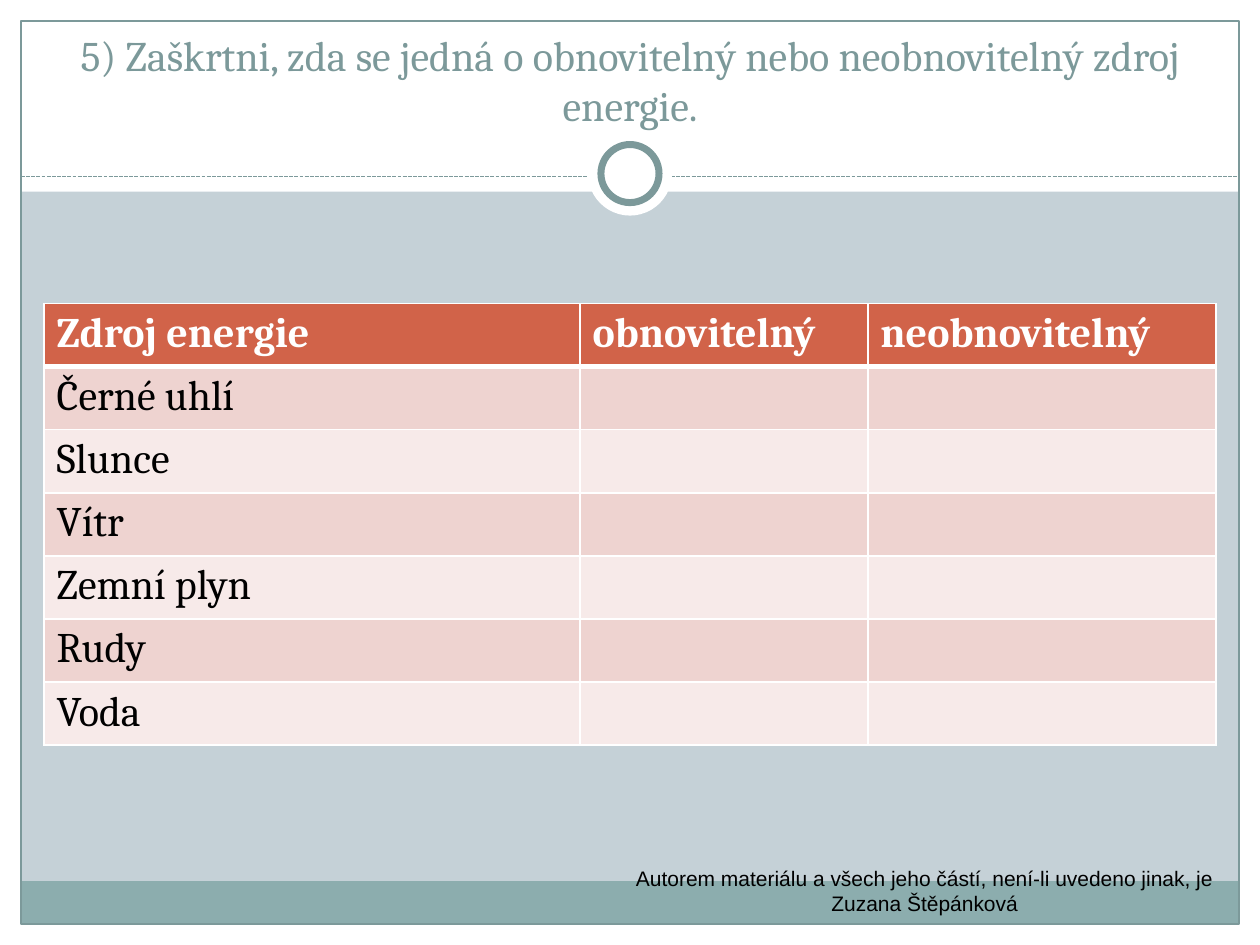
from lxml.etree import SubElement
from pptx import Presentation
from pptx.dml.color import RGBColor
from pptx.enum.dml import MSO_LINE
from pptx.enum.shapes import MSO_CONNECTOR, MSO_SHAPE
from pptx.enum.text import MSO_ANCHOR, PP_ALIGN
from pptx.oxml.ns import qn
from pptx.util import Pt

TITLE = "5) Zaškrtni, zda se jedná o obnovitelný nebo neobnovitelný zdroj energie."
CREDIT = "Autorem materiálu a všech jeho částí, není-li uvedeno jinak, je Zuzana Štěpánková"
HEADERS = ["Zdroj energie", "obnovitelný", "neobnovitelný"]
SOURCES = ["Černé uhlí", "Slunce", "Vítr", "Zemní plyn", "Rudy", "Voda"]

WHITE = RGBColor(0xFF, 0xFF, 0xFF)
BLACK = RGBColor(0, 0, 0)
BACKGROUND = RGBColor(0xC5, 0xD1, 0xD7)
TEAL = RGBColor(0x7C, 0x99, 0x9A)
FOOTER = RGBColor(0x8C, 0xAD, 0xAE)
ORANGE = RGBColor(0xD1, 0x63, 0x49)
BANDS = [RGBColor(0xEE, 0xD3, 0xD0), RGBColor(0xF7, 0xEA, 0xE9)]

WIDTH, HEIGHT, MARGIN = 720, 540, 12
INNER_WIDTH, INNER_HEIGHT = WIDTH - 2 * MARGIN, HEIGHT - 2 * MARGIN
HEADER_HEIGHT, FOOTER_HEIGHT = 109.5, 24.5
DIVIDER_Y, RING_Y = 100.8, 99.2
COLUMN_WIDTHS = [306.3, 164.4, 199]
ROW_HEIGHT = 34.85
TABLE_LEFT, TABLE_TOP = 25.2, 173.5

FRAME_PARTS = [
    (0, HEIGHT - MARGIN, WIDTH, MARGIN, WHITE),
    (0, 0, WIDTH, HEADER_HEIGHT, WHITE),
    (0, 0, MARGIN, HEIGHT, WHITE),
    (WIDTH - MARGIN, 0, MARGIN, HEIGHT, WHITE),
    (MARGIN, HEIGHT - MARGIN - FOOTER_HEIGHT, INNER_WIDTH, FOOTER_HEIGHT, FOOTER),
]
RING_PARTS = [(48, None, 0), (33.2, TEAL, 4)]


def write(frame, text, font="Cambria", size=24, color=BLACK, bold=False, align=PP_ALIGN.LEFT):
    para = frame.paragraphs[0]
    para.alignment = align
    span = para.add_run()
    span.text = text
    span.font.name = font
    span.font.size = Pt(size)
    span.font.bold = bold
    span.font.color.rgb = color


def add_box(page, left, top, width, height, text, anchor=MSO_ANCHOR.TOP, **style):
    box = page.shapes.add_textbox(Pt(left), Pt(top), Pt(width), Pt(height))
    box.text_frame.word_wrap = True
    box.text_frame.vertical_anchor = anchor
    write(box.text_frame, text, align=PP_ALIGN.CENTER, **style)


def add_part(page, kind, left, top, width, height, fill=None, line=None, weight=0):
    part = page.shapes.add_shape(kind, Pt(left), Pt(top), Pt(width), Pt(height))
    part.shadow.inherit = False
    if fill is None:
        part.fill.background()
    else:
        part.fill.solid()
        part.fill.fore_color.rgb = fill
    if line is None:
        part.line.fill.background()
    else:
        part.line.color.rgb = line
        part.line.width = Pt(weight)


def add_divider(page):
    divider = page.shapes.add_connector(
        MSO_CONNECTOR.STRAIGHT, Pt(MARGIN), Pt(DIVIDER_Y), Pt(WIDTH - MARGIN), Pt(DIVIDER_Y))
    divider.line.color.rgb = TEAL
    divider.line.width = Pt(0.75)
    divider.line.dash_style = MSO_LINE.SQUARE_DOT
    SubElement(divider._element.spPr, qn("a:effectLst"))


def style_cell(cell, fill, top=1, bottom=1):
    properties = cell._tc.get_or_add_tcPr()
    for side, weight in (("L", 1), ("R", 1), ("T", top), ("B", bottom)):
        border = SubElement(properties, qn(f"a:ln{side}"), w=str(Pt(weight)))
        SubElement(SubElement(border, qn("a:solidFill")), qn("a:srgbClr"), val=str(WHITE))
    cell.fill.solid()
    cell.fill.fore_color.rgb = fill


def add_sources_table(page):
    rows = len(SOURCES) + 1
    table = page.shapes.add_table(
        rows, len(HEADERS), Pt(TABLE_LEFT), Pt(TABLE_TOP),
        Pt(sum(COLUMN_WIDTHS)), Pt(rows * ROW_HEIGHT)).table
    for column, width in zip(table.columns, COLUMN_WIDTHS):
        column.width = Pt(width)
    for row in table.rows:
        row.height = Pt(ROW_HEIGHT)
    for index, header in enumerate(HEADERS):
        cell = table.cell(0, index)
        style_cell(cell, ORANGE, bottom=3)
        write(cell.text_frame, header, color=WHITE, bold=True)
    for number, source in enumerate(SOURCES, 1):
        for index in range(len(HEADERS)):
            style_cell(table.cell(number, index), BANDS[(number - 1) % 2], top=3 if number == 1 else 1)
        write(table.cell(number, 0).text_frame, source)


def main():
    deck = Presentation()
    deck.slide_width, deck.slide_height = Pt(WIDTH), Pt(HEIGHT)
    page = deck.slides.add_slide(deck.slide_layouts[6])
    page.background.fill.solid()
    page.background.fill.fore_color.rgb = BACKGROUND

    for *place, fill in FRAME_PARTS:
        add_part(page, MSO_SHAPE.RECTANGLE, *place, fill=fill)
    add_part(page, MSO_SHAPE.RECTANGLE, MARGIN, MARGIN, INNER_WIDTH, INNER_HEIGHT,
             line=TEAL, weight=0.75)
    add_divider(page)
    for size, line, weight in RING_PARTS:
        add_part(page, MSO_SHAPE.OVAL, (WIDTH - size) / 2, RING_Y - size / 2, size, size,
                 fill=WHITE, line=line, weight=weight)

    add_box(page, 24, 18, 672, 60, TITLE, anchor=MSO_ANCHOR.BOTTOM, color=TEAL)
    add_sources_table(page)
    add_box(page, 348.5, 491, 360, 36, CREDIT, font="Arial", size=12)
    deck.save("out.pptx")


if __name__ == "__main__":
    main()
